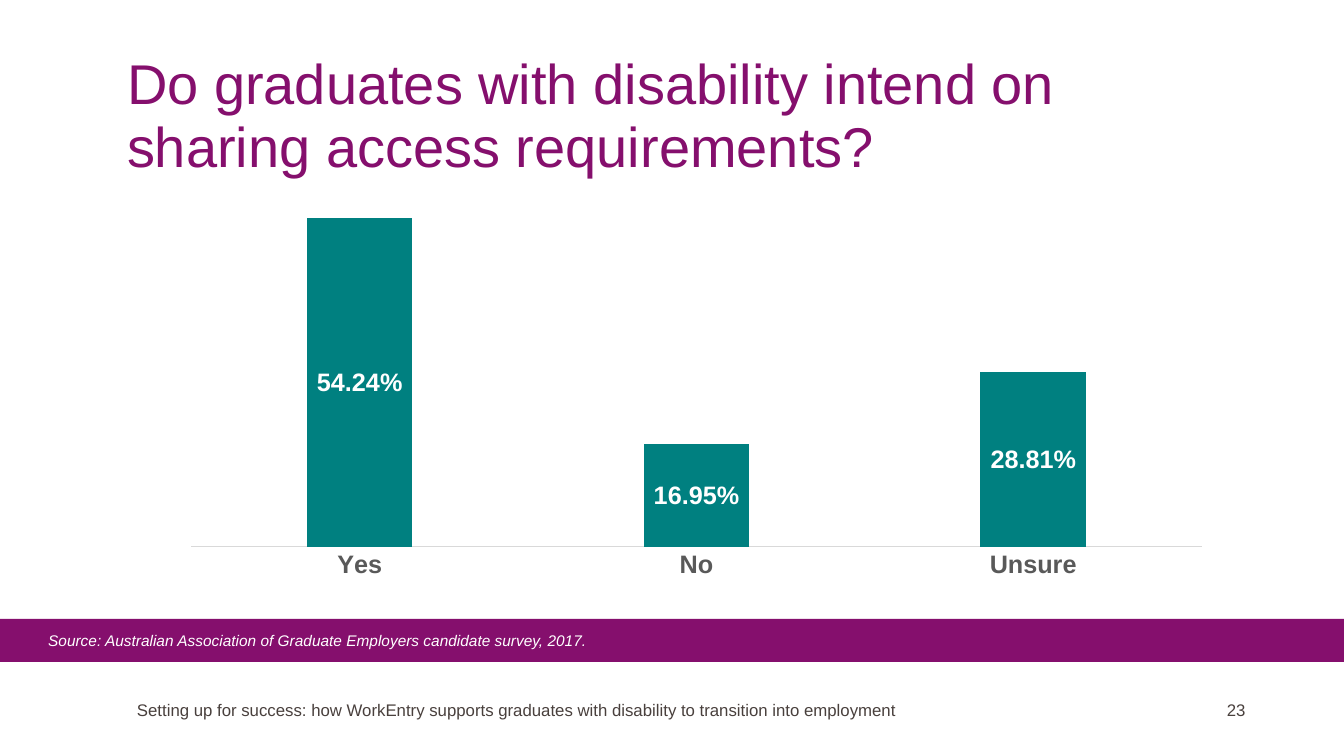
from dataclasses import dataclass

from lxml.etree import SubElement
from pptx import Presentation
from pptx.chart.data import CategoryChartData
from pptx.dml.color import RGBColor
from pptx.enum.chart import XL_CHART_TYPE, XL_LABEL_POSITION, XL_TICK_MARK
from pptx.enum.shapes import MSO_CONNECTOR, MSO_SHAPE
from pptx.enum.text import MSO_ANCHOR
from pptx.oxml import parse_xml
from pptx.oxml.ns import nsdecls, qn
from pptx.util import Inches, Pt


@dataclass(frozen=True)
class Theme:
    font: str = "Arial"
    purple: RGBColor = RGBColor(0x85, 0x0F, 0x6D)
    teal: RGBColor = RGBColor(0x00, 0x80, 0x80)
    white: RGBColor = RGBColor(0xFF, 0xFF, 0xFF)
    grey: RGBColor = RGBColor(0x59, 0x59, 0x59)
    axis: RGBColor = RGBColor(0xD9, 0xD9, 0xD9)
    footer: RGBColor = RGBColor(0x49, 0x40, 0x3D)
    title_size: int = 40
    title_spacing: int = 45
    chart_size: int = 18
    footer_size: int = 12
    source_size: int = 11


THEME = Theme()
SLIDE_WIDTH, SLIDE_HEIGHT = 13.33, 7.5
MARGIN, CONTENT_WIDTH = 1.26, 10.81
PERCENT = "0.00%"


def style_font(font, size, color, bold=False, italic=False):
    font.name = THEME.font
    font.size = Pt(size)
    font.color.rgb = color
    font.bold = bold
    font.italic = italic


def add_text(slide, box, text, size, color, anchor=MSO_ANCHOR.TOP, italic=False):
    shape = slide.shapes.add_textbox(*map(Inches, box))
    frame = shape.text_frame
    frame.word_wrap = True
    frame.vertical_anchor = anchor
    paragraph = frame.paragraphs[0]
    paragraph.text = text
    style_font(paragraph.font, size, color, italic=italic)
    return frame


def add_title(slide, box, text):
    frame = add_text(slide, box, text, THEME.title_size, THEME.purple)
    frame.margin_left = frame.margin_right = 0
    frame.margin_top = frame.margin_bottom = 0
    frame.paragraphs[0].line_spacing = Pt(THEME.title_spacing)


def set_plot_layout(chart, x, y, width, height):
    """Fix the inner plot area as fractions of the chart frame."""
    plot_area = chart._chartSpace.chart.plotArea
    for old_layout in plot_area.findall(qn("c:layout")):
        plot_area.remove(old_layout)
    layout = parse_xml(f"<c:layout {nsdecls('c')}/>")
    manual = SubElement(layout, qn("c:manualLayout"))
    settings = dict(layoutTarget="inner", xMode="edge", yMode="edge",
                    x=x, y=y, w=width, h=height)
    for name, value in settings.items():
        SubElement(manual, qn(f"c:{name}")).set("val", str(value))
    plot_area.insert(0, layout)


def add_answer_chart(slide, box, answers):
    data = CategoryChartData(number_format=PERCENT)
    data.categories = list(answers)
    data.add_series("Series 1", list(answers.values()))
    chart = slide.shapes.add_chart(
        XL_CHART_TYPE.COLUMN_CLUSTERED, *map(Inches, box), data).chart
    chart.has_title = False
    chart.has_legend = False
    chart.font.name = THEME.font
    chart.font.size = Pt(10)
    set_plot_layout(chart, 0.059, 0.056, 0.927, 0.826)

    # Axes
    category_axis = chart.category_axis
    category_axis.major_tick_mark = XL_TICK_MARK.NONE
    category_axis.format.line.color.rgb = THEME.axis
    category_axis.format.line.width = Pt(0.75)
    style_font(category_axis.tick_labels.font, THEME.chart_size, THEME.grey, bold=True)
    value_axis = chart.value_axis
    value_axis.minimum_scale, value_axis.maximum_scale = 0, 0.6
    value_axis.has_major_gridlines = False
    value_axis.visible = False

    # Columns and their labels
    plot = chart.plots[0]
    plot.vary_by_categories = False
    plot.gap_width, plot.overlap = 219, -27
    series = plot.series[0]
    series.format.fill.solid()
    series.format.fill.fore_color.rgb = THEME.teal
    labels = series.data_labels
    labels.show_value = True
    labels.position = XL_LABEL_POSITION.CENTER
    labels.number_format = PERCENT
    labels.number_format_is_linked = False
    style_font(labels.font, THEME.chart_size, THEME.white, bold=True)


def add_source_band(slide, box, text):
    left, top, width, height = box
    # Rule along the band's lower edge
    rule_y = Inches(top + 0.36)
    rule = slide.shapes.add_connector(
        MSO_CONNECTOR.STRAIGHT, Inches(left), rule_y, Inches(left + width), rule_y)
    rule.line.color.rgb = THEME.purple
    rule.line.width = Pt(10)
    SubElement(rule._element.spPr, qn("a:effectLst"))
    # Band
    band = slide.shapes.add_shape(MSO_SHAPE.RECTANGLE, *map(Inches, box))
    band.shadow.inherit = False
    band.fill.solid()
    band.fill.fore_color.rgb = THEME.purple
    band.line.fill.background()
    # Source
    add_text(slide, (left + 0.38, top + 0.07, width - 0.76, 0.29), text,
             THEME.source_size, THEME.white, italic=True)


def add_footer(slide, box, text, number):
    left, top, width, height = box
    number_width = 0.85
    columns = ((left, 8.49, text), (left + width - number_width, number_width, number))
    for column_left, column_width, content in columns:
        add_text(slide, (column_left, top, column_width, height), content,
                 THEME.footer_size, THEME.footer, MSO_ANCHOR.MIDDLE)


def main():
    presentation = Presentation()
    presentation.slide_width = Inches(SLIDE_WIDTH)
    presentation.slide_height = Inches(SLIDE_HEIGHT)
    slide = presentation.slides.add_slide(presentation.slide_layouts[6])

    add_source_band(
        slide, (0, 6.14, SLIDE_WIDTH, 0.42),
        "Source: Australian Association of Graduate Employers candidate survey, 2017.")
    add_title(slide, (MARGIN, 0.52, CONTENT_WIDTH, 0.8),
              "Do graduates with disability intend on sharing access requirements?")
    add_answer_chart(slide, (MARGIN, 1.57, CONTENT_WIDTH, 4.37),
                     {"Yes": 0.5424, "No": 0.1695, "Unsure": 0.2881})
    add_footer(
        slide, (MARGIN, 6.58, 11.66, 0.92),
        "Setting up for success: how WorkEntry supports graduates with disability "
        "to transition into employment", "23")
    presentation.save("out.pptx")


if __name__ == "__main__":
    main()
